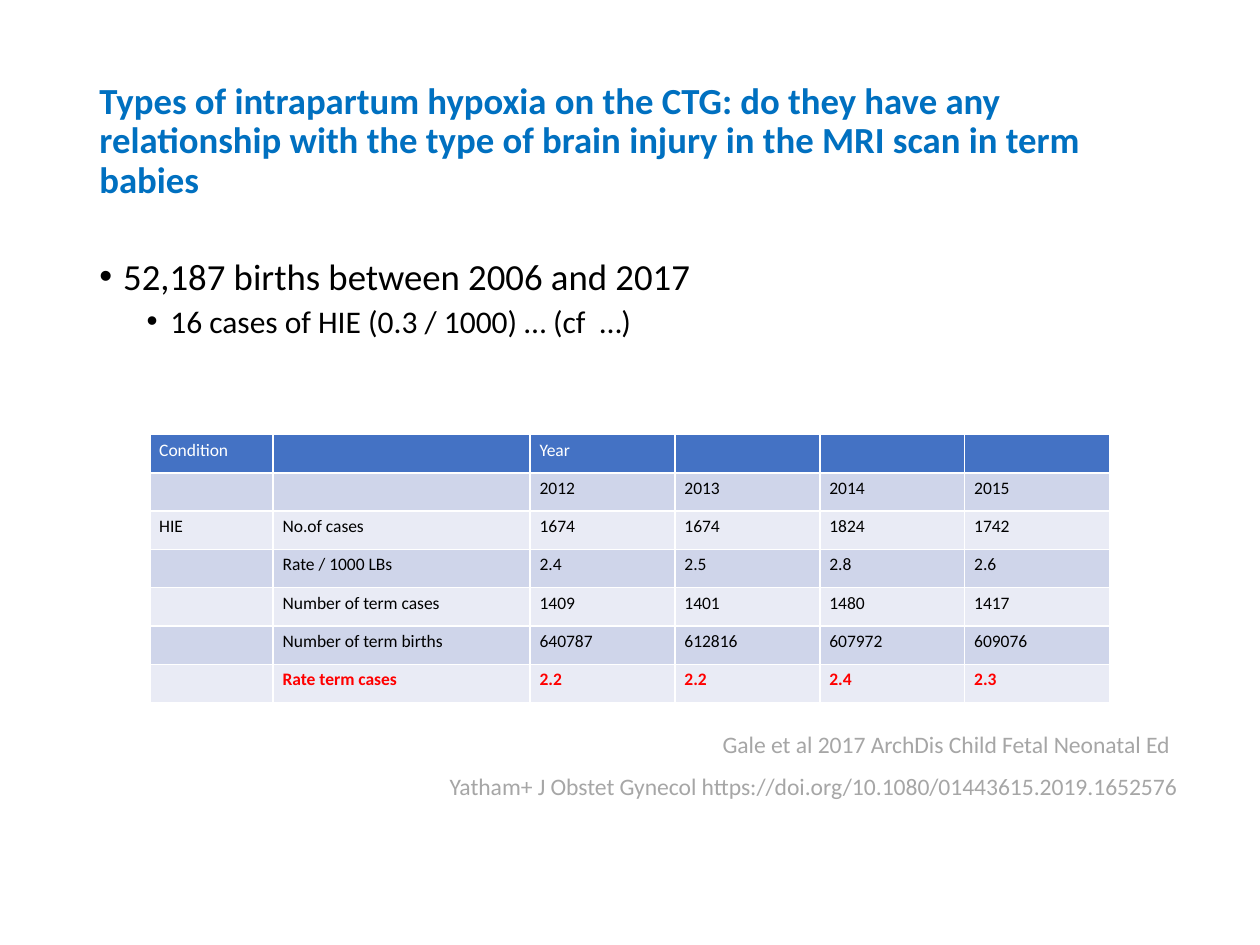
from lxml.etree import SubElement
from pptx import Presentation
from pptx.dml.color import RGBColor
from pptx.enum.text import MSO_ANCHOR, MSO_AUTO_SIZE, PP_ALIGN
from pptx.oxml.ns import qn
from pptx.util import Cm, Pt

FONT = "Calibri"
TITLE_BLUE = RGBColor(0x00, 0x70, 0xC0)
HEADER_BLUE = RGBColor(0x44, 0x72, 0xC4)
BAND_DARK = RGBColor(0xCF, 0xD5, 0xEA)
BAND_LIGHT = RGBColor(0xE9, 0xEB, 0xF5)
WHITE = RGBColor(0xFF, 0xFF, 0xFF)
BLACK = RGBColor(0x00, 0x00, 0x00)
RED = RGBColor(0xFF, 0x00, 0x00)
GREY = RGBColor(0xA6, 0xA6, 0xA6)

TITLE = (
    "Types of intrapartum hypoxia on the CTG: do they have any relationship "
    "with the type of brain injury in the MRI scan in term babies"
)
BULLETS = [
    ("52,187 births between 2006 and 2017", 0, 21),
    ("16 cases of HIE (0.3 / 1000) … (cf  …)", 1, 18),
]
CASES = [
    ["Condition", "", "Year", "", "", ""],
    ["", "", "2012", "2013", "2014", "2015"],
    ["HIE", "No.of cases", "1674", "1674", "1824", "1742"],
    ["", "Rate / 1000 LBs", "2.4", "2.5", "2.8", "2.6"],
    ["", "Number of term cases", "1409", "1401", "1480", "1417"],
    ["", "Number of term births", "640787", "612816", "607972", "609076"],
    ["", "Rate term cases", "2.2", "2.2", "2.4", "2.3"],
]
COLUMN_SHARES = [0.98, 2.04, 1.15, 1.15, 1.15, 1.15]


def format_runs(paragraph, size, color, bold=False):
    for run in paragraph.runs:
        run.font.name = FONT
        run.font.size = Pt(size)
        run.font.bold = bold
        run.font.color.rgb = color


def place(shape, box):
    shape.left, shape.top, shape.width, shape.height = (Cm(length) for length in box)


def fill_title(slide, box):
    shape = slide.shapes.title
    place(shape, box)
    text_frame = shape.text_frame
    text_frame.text = TITLE
    text_frame.auto_size = MSO_AUTO_SIZE.NONE
    text_frame.vertical_anchor = MSO_ANCHOR.MIDDLE
    paragraph = text_frame.paragraphs[0]
    paragraph.alignment = PP_ALIGN.LEFT
    paragraph.line_spacing = 0.9
    format_runs(paragraph, 21, TITLE_BLUE, bold=True)


def fill_bullets(slide, box):
    shape = slide.placeholders[1]
    place(shape, box)
    text_frame = shape.text_frame
    text_frame.text = "\n".join(text for text, level, size in BULLETS)
    text_frame.auto_size = MSO_AUTO_SIZE.NONE
    for paragraph, (text, level, size) in zip(text_frame.paragraphs, BULLETS):
        paragraph.level = level
        paragraph.line_spacing = 0.9
        paragraph.space_before = Pt(4.5)
        format_runs(paragraph, size, BLACK)
        properties = paragraph._p.get_or_add_pPr()
        properties.set("marL", str(Cm(0.48 + 0.95 * level)))
        properties.set("indent", str(-Cm(0.48)))
        SubElement(properties, qn("a:buFont")).set("typeface", "Arial")
        SubElement(properties, qn("a:buChar")).set("char", "•")


def format_cell(cell, text, fill, color, bold):
    cell.fill.solid()
    cell.fill.fore_color.rgb = fill
    cell.margin_left = cell.margin_right = Cm(0.19)
    cell.margin_top = cell.margin_bottom = Cm(0.1)
    cell.text_frame.text = text
    paragraph = cell.text_frame.paragraphs[0]
    format_runs(paragraph, 10, color, bold)
    if not text:
        SubElement(paragraph._p, qn("a:endParaRPr")).set("sz", "1000")


def add_cases_table(slide, box):
    left, top, width, height = box
    frame = slide.shapes.add_table(
        len(CASES), len(COLUMN_SHARES), Cm(left), Cm(top), Cm(width), Cm(height)
    )
    table = frame.table
    for column, share in zip(table.columns, COLUMN_SHARES):
        column.width = Cm(width * share / sum(COLUMN_SHARES))
    last = len(CASES) - 1
    for row_index, row in enumerate(CASES):
        fill = BAND_DARK if row_index % 2 else BAND_LIGHT
        color = BLACK
        if row_index == 0:
            fill, color = HEADER_BLUE, WHITE
        elif row_index == last:
            color = RED
        for column_index, text in enumerate(row):
            cell = table.cell(row_index, column_index)
            format_cell(cell, text, fill, color, row_index == last)


def add_citation(slide, box, text):
    shape = slide.shapes.add_textbox(*(Cm(length) for length in box))
    text_frame = shape.text_frame
    text_frame.word_wrap = True
    text_frame.auto_size = MSO_AUTO_SIZE.SHAPE_TO_FIT_TEXT
    text_frame.text = text
    paragraph = text_frame.paragraphs[0]
    paragraph.alignment = PP_ALIGN.RIGHT
    format_runs(paragraph, 13.5, GREY)


def main():
    presentation = Presentation()
    presentation.slide_width = Cm(25.4)
    presentation.slide_height = Cm(19.05)
    slide = presentation.slides.add_slide(presentation.slide_layouts[1])
    fill_title(slide, (1.75, 1.02, 21.9, 3.68))
    fill_bullets(slide, (1.75, 5.08, 21.9, 12.09))
    add_citation(
        slide,
        (8.46, 15.44, 15.52, 0.84),
        "Yatham+ J Obstet Gynecol https://doi.org/10.1080/01443615.2019.1652576",
    )
    add_cases_table(slide, (3.02, 8.76, 19.35, 5.41))
    add_citation(
        slide,
        (12.7, 14.58, 11.13, 0.84),
        "Gale et al 2017 ArchDis Child Fetal Neonatal Ed",
    )
    presentation.save("out.pptx")


if __name__ == "__main__":
    main()
